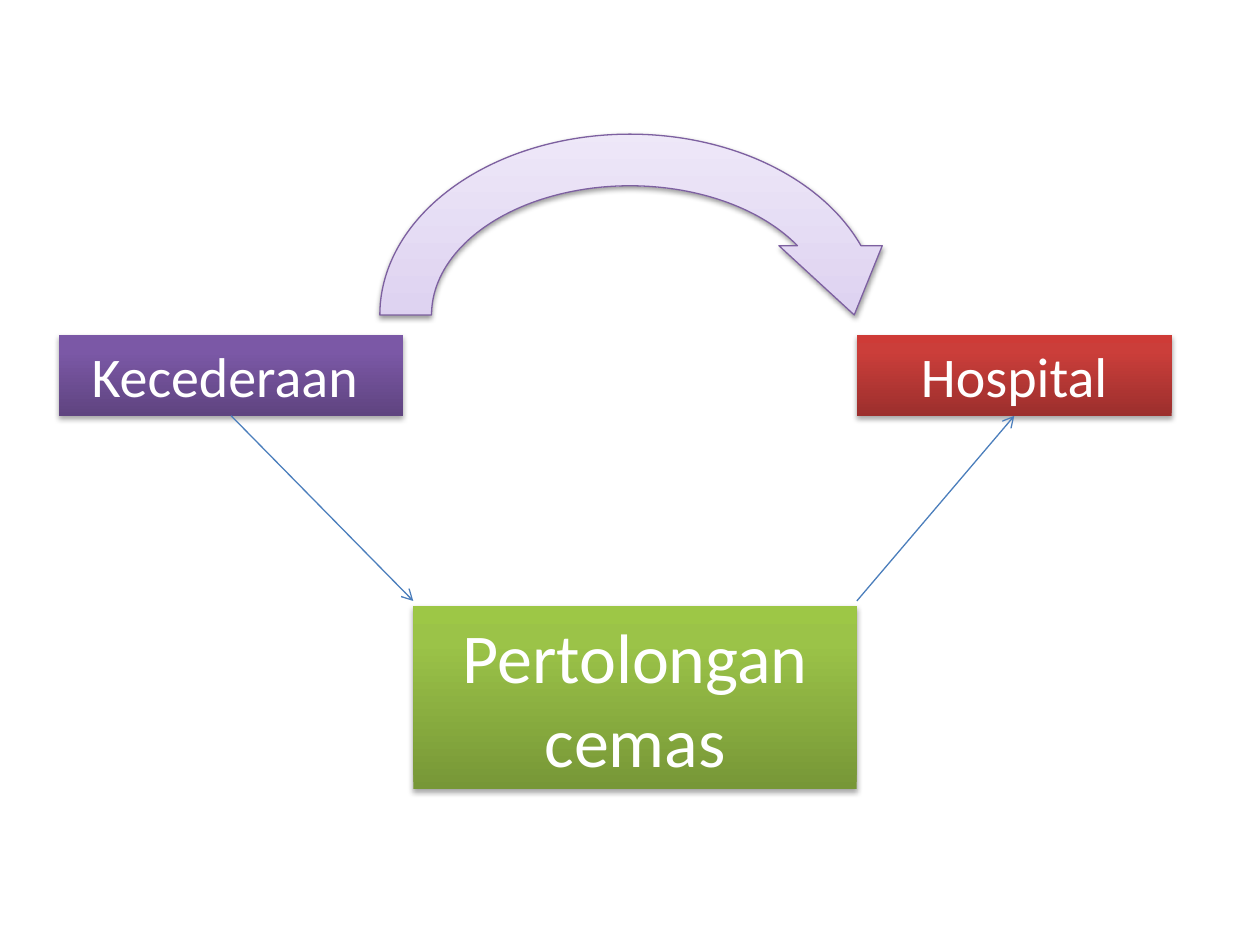
from pptx import Presentation
from pptx.dml.color import RGBColor
from pptx.enum.shapes import MSO_CONNECTOR, MSO_SHAPE
from pptx.enum.text import MSO_ANCHOR, MSO_AUTO_SIZE, PP_ALIGN
from pptx.oxml.ns import qn
from pptx.util import Inches, Pt
from lxml import etree

RECTANGLE = MSO_SHAPE.RECTANGLE
CIRCULAR_ARROW = MSO_SHAPE.CIRCULAR_ARROW
STRAIGHT = MSO_CONNECTOR.STRAIGHT
CENTER = PP_ALIGN.CENTER
MIDDLE = MSO_ANCHOR.MIDDLE
GROW_TO_TEXT = MSO_AUTO_SIZE.SHAPE_TO_FIT_TEXT
BOTTOM_SIDE = 2

BOX_STOPS = (0, 80, 100)
ARC_STOPS = (0, 35, 100)


def color(value):
    return RGBColor.from_string(value)


def add_element(parent, tag, **attributes):
    element = etree.SubElement(parent, qn(tag))
    for name, value in attributes.items():
        element.set(name, str(value))
    return element


def add_color(parent, value, opacity=100):
    element = add_element(parent, "a:srgbClr", val=value)
    if opacity < 100:
        add_element(element, "a:alpha", val=opacity * 1000)


def fill_gradient(shape, stops, colors):
    shape.fill.gradient()
    shape.fill.gradient_angle = 90
    stop_list = shape._element.spPr.find(".//" + qn("a:gsLst"))
    for stop in list(stop_list):
        stop_list.remove(stop)
    for position, value in zip(stops, colors):
        add_color(add_element(stop_list, "a:gs", pos=position * 1000), value)


def add_shadow(shape, opacity, distance):
    shape.shadow.inherit = False
    effects = shape._element.spPr.find(qn("a:effectLst"))
    shadow = add_element(effects, "a:outerShdw", blurRad=Pt(3.1), dist=Pt(distance),
                         dir=90 * 60000, rotWithShape=0)
    add_color(shadow, "000000", opacity)


def add_label_box(slide, box, text, size, colors):
    shape = slide.shapes.add_shape(RECTANGLE, *map(Inches, box))
    fill_gradient(shape, BOX_STOPS, colors)
    shape.line.fill.background()
    add_shadow(shape, 35, 1.8)

    frame = shape.text_frame
    frame_format = {"word_wrap": True, "auto_size": GROW_TO_TEXT, "vertical_anchor": MIDDLE}
    for name, value in frame_format.items():
        setattr(frame, name, value)
    paragraph = frame.paragraphs[0]
    paragraph.alignment = CENTER
    run = paragraph.add_run()
    run.text = text
    for name, value in {"name": "Calibri", "size": Pt(size)}.items():
        setattr(run.font, name, value)
    run.font.color.rgb = color("FFFFFF")
    return shape


def add_arc_arrow(slide, box, colors):
    shape = slide.shapes.add_shape(CIRCULAR_ARROW, *map(Inches, box))
    fill_gradient(shape, ARC_STOPS, colors)
    shape.line.color.rgb = color("7D60A0")
    shape.line.width = Pt(0.75)
    add_shadow(shape, 38, 1.6)


def add_arrow(slide, start, end):
    connector = slide.shapes.add_connector(STRAIGHT, *map(Inches, (*start, *end)))
    connector.line.color.rgb = color("4B7EBC")
    connector.line.width = Pt(0.75)
    properties = connector._element.spPr
    add_element(properties.find(qn("a:ln")), "a:tailEnd", type="arrow")
    add_element(properties, "a:effectLst")
    return connector


def add_treatment_flow(slide):
    injury = add_label_box(slide, (0.47, 2.66, 2.73, 0.64), "Kecederaan ", 32,
                           ("5F4480", "7B58A6", "7C57A8"))
    hospital = add_label_box(slide, (6.8, 2.66, 2.5, 0.64), "Hospital", 32,
                             ("9C2F2D", "CB3E3A", "CE3B37"))
    add_arc_arrow(slide, (2.81, 0.86, 4.38, 3.28), ("C9B5E8", "D8CBEE", "F0EAF9"))
    add_label_box(slide, (3.28, 4.81, 3.52, 1.45), "Pertolongan cemas", 40,
                  ("779737", "9BC348", "9DC746"))
    add_arrow(slide, (1.84, 3.3), (3.28, 4.77)).begin_connect(injury, BOTTOM_SIDE)
    add_arrow(slide, (6.8, 4.77), (8.05, 3.3)).end_connect(hospital, BOTTOM_SIDE)


def main():
    presentation = Presentation()
    presentation.slide_width = Inches(10)
    presentation.slide_height = Inches(7.5)
    slide = presentation.slides.add_slide(presentation.slide_layouts[6])
    add_treatment_flow(slide)
    presentation.save("out.pptx")


if __name__ == "__main__":
    main()
